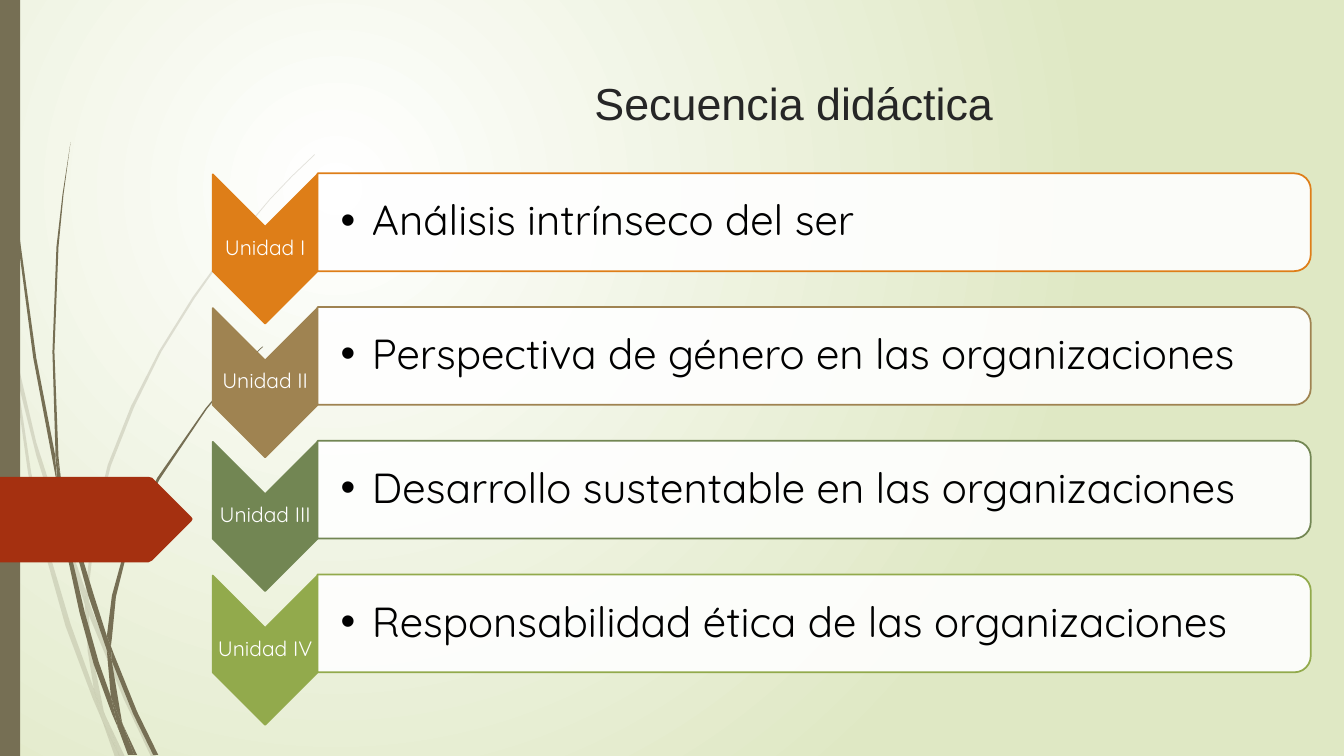
from lxml import etree
from pptx import Presentation
from pptx.dml.color import RGBColor
from pptx.enum.shapes import MSO_SHAPE
from pptx.enum.text import MSO_ANCHOR, PP_ALIGN
from pptx.oxml.ns import qn
from pptx.util import Inches, Pt

CHEVRON = MSO_SHAPE.CHEVRON
ROUND_BAR = MSO_SHAPE.ROUND_2_SAME_RECTANGLE
RECTANGLE = MSO_SHAPE.RECTANGLE
MIDDLE, BOTTOM = MSO_ANCHOR.MIDDLE, MSO_ANCHOR.BOTTOM
CENTER, LEFT = PP_ALIGN.CENTER, PP_ALIGN.LEFT

WHITE = RGBColor(0xFF, 0xFF, 0xFF)
BLACK = RGBColor(0, 0, 0)
PALE_GREEN = RGBColor(0xDF, 0xE8, 0xC4)
OLIVE = RGBColor(0x76, 0x6F, 0x54)
RED = RGBColor(0xA5, 0x30, 0x10)
DARK = RGBColor(0x26, 0x26, 0x26)

UNITS = [
    ("Unidad I", "Análisis intrínseco del ser", RGBColor(0xDE, 0x7E, 0x18)),
    ("Unidad II", "Perspectiva de género en las organizaciones", RGBColor(0x9F, 0x83, 0x51)),
    ("Unidad III", "Desarrollo sustentable en las organizaciones", RGBColor(0x72, 0x86, 0x53)),
    ("Unidad IV", "Responsabilidad ética de las organizaciones", RGBColor(0x92, 0xAA, 0x4C)),
]

# Outlines of the grass blades, piece by piece
FAINT_GRASS = [
    [(0.11, 3.5), (0.09, 3.22), (0, 2.82), (0, 2.99), (0.1, 3.44)],
    [(0.58, 5.22), (0.84, 5.99), (0.85, 5.86), (0.62, 5.2), (0.36, 4.39), (0.14, 3.45),
     (0.17, 3.76), (0.36, 4.52)],
    [(0.92, 6.07), (0.88, 5.96), (0.88, 6.1), (1.23, 6.94), (1.5, 7.51), (1.55, 7.51), (1.27, 6.92)],
    [(1.19, 7.51), (1.24, 7.51), (1.05, 7.11)],
    [(0.93, 6.83), (0.7, 6.19), (0.48, 5.45), (0.31, 4.69), (0.17, 3.76), (0.11, 3.5),
     (0.28, 4.7), (0.44, 5.46), (0.65, 6.21), (0.92, 6.93), (1.01, 7.14), (0.99, 7.07)],
    [(0.84, 5.99), (0.87, 6.46), (0.93, 6.83), (0.96, 6.92), (1.05, 7.11), (1.03, 7.06),
     (0.91, 6.46), (0.88, 6.1), (0.88, 6.08)],
    [(0.88, 5.84), (0.95, 5.22), (1.1, 4.62), (1.33, 4.04), (1.6, 3.49), (1.93, 2.96), (2.29, 2.45),
     (2.68, 1.98), (2.9, 1.75), (3.12, 1.54), (3.12, 1.53), (2.89, 1.75), (2.68, 1.97),
     (2.28, 2.44), (1.91, 2.95), (1.58, 3.48), (1.3, 4.03), (1.07, 4.61), (0.92, 5.22),
     (0.85, 5.84), (0.85, 5.86), (0.88, 5.96)],
    [(1.01, 7.14), (1.14, 7.51), (1.19, 7.51)],
    [(0.88, 6.08), (0.88, 6.1), (0.88, 5.96), (0.85, 5.86), (0.84, 5.99)],
    [(0.96, 6.92), (0.93, 6.83), (0.99, 7.07), (1.01, 7.14), (1.19, 7.51), (1.05, 7.11)],
]
DARK_GRASS = [
    [(0.07, 1.1), (0.17, 2.33), (0.33, 3.55), (0.56, 4.77), (0.57, 4.81), (0.55, 4.57),
     (0.55, 4.53), (0.36, 3.55), (0.19, 2.32), (0.08, 1.09), (0.05, 0.48), (0.04, 0),
     (0.03, 0), (0.04, 0.48)],
    [(0.88, 5.92), (1.06, 6.45), (1.06, 6.33), (1.06, 6.31), (0.93, 5.9), (0.75, 5.31),
     (0.6, 4.72), (0.64, 5.05)],
    [(1.13, 6.49), (1.1, 6.41), (1.11, 6.56), (1.32, 7.08), (1.52, 7.49), (1.57, 7.49), (1.36, 7.06)],
    [(1.1, 6.91), (0.98, 6.57), (0.84, 6.07), (0.72, 5.56), (0.64, 5.05), (0.57, 4.77), (0.68, 5.57),
     (0.79, 6.08), (0.93, 6.59), (1.11, 7.08), (1.17, 7.22), (1.16, 7.17)],
    [(0.6, 4.72), (0.58, 4.53), (0.54, 3.49), (0.58, 2.45), (0.63, 1.93), (0.7, 1.41),
     (0.62, 1.93), (0.56, 2.45), (0.52, 3.49), (0.55, 4.49)],
    [(1.33, 7.49), (1.36, 7.49), (1.22, 7.19)],
    [(0.57, 4.77), (0.64, 5.05), (0.6, 4.72), (0.55, 4.49), (0.55, 4.53)],
    [(1.11, 6.33), (1.15, 5.92), (1.25, 5.52), (1.4, 5.13), (1.58, 4.76), (2.05, 4.06), (2.31, 3.74),
     (2.45, 3.59), (2.61, 3.44), (2.6, 3.44), (2.45, 3.58), (2.31, 3.73), (2.04, 4.05),
     (1.56, 4.74), (1.37, 5.12), (1.22, 5.51), (1.11, 5.91), (1.06, 6.31), (1.1, 6.41)],
    [(1.17, 7.22), (1.27, 7.49), (1.31, 7.49)],
    [(1.06, 6.45), (1.1, 6.91), (1.16, 7.06), (1.22, 7.19), (1.21, 7.16), (1.11, 6.56), (1.09, 6.51)],
    [(1.06, 6.45), (1.09, 6.51), (1.11, 6.56), (1.1, 6.41), (1.06, 6.31), (1.06, 6.33)],
    [(1.16, 7.06), (1.1, 6.91), (1.16, 7.17), (1.17, 7.22), (1.3, 7.49), (1.33, 7.49), (1.22, 7.19)],
]


def paint(shape, fill, line=None, alpha=100):
    shape.shadow.inherit = False
    shape.fill.solid()
    shape.fill.fore_color.rgb = fill
    if alpha < 100:
        color = shape.element.spPr.xpath("./a:solidFill/a:srgbClr")[0]
        etree.SubElement(color, qn("a:alpha"), val=str(alpha * 1000))
    if line is None:
        shape.line.fill.background()
    else:
        shape.line.color.rgb = line
        shape.line.width = Pt(1.25)


def add_outline(page, points, fill, alpha=100):
    corners = [(Inches(x), Inches(y)) for x, y in points]
    builder = page.shapes.build_freeform(*corners[0])
    builder.add_line_segments(corners[1:], close=True)
    paint(builder.convert_to_shape(), fill, alpha=alpha)


def add_turned_shape(page, kind, left, top, width, height):
    """Place a shape turned a quarter so that it covers the given box."""
    shift = (width - height) / 2
    shape = page.shapes.add_shape(kind, Inches(left + shift), Inches(top - shift),
                                  Inches(height), Inches(width))
    shape.rotation = 90
    return shape


def add_text(page, box, words, size, color, align, insets, after):
    frame = page.shapes.add_textbox(*map(Inches, box)).text_frame
    frame.word_wrap = True
    frame.vertical_anchor = MIDDLE
    frame.margin_left, frame.margin_top, frame.margin_right, frame.margin_bottom = map(Inches, insets)
    para = frame.paragraphs[0]
    para.alignment = align
    para.line_spacing = 0.9
    para.space_after = Pt(after)
    span = para.add_run()
    span.text = words
    span.font.name, span.font.size = "Quicksand", Pt(size)
    span.font.color.rgb = color
    return para


def add_bullet(para, indent):
    para.level = 1
    props = para._p.get_or_add_pPr()
    props.set("marL", str(Inches(indent)))
    props.set("indent", str(-Inches(indent)))
    etree.SubElement(props, qn("a:buFont"), typeface="Arial")
    etree.SubElement(props, qn("a:buChar"), char="•")


def add_background(page):
    fill = page.background.fill
    fill.gradient()
    for stop, color in zip(fill.gradient_stops, (WHITE, PALE_GREEN)):
        stop.color.rgb = color
    gradient = page.element.xpath(".//p:bgPr/a:gradFill")[0]
    gradient.remove(gradient.find(qn("a:lin")))
    circle = etree.SubElement(gradient, qn("a:path"), path="circle")
    etree.SubElement(circle, qn("a:fillToRect"), l="50000", t="50000", r="100000", b="100000")


def add_side_decoration(page, height):
    for pieces, alpha in ((FAINT_GRASS, 20), (DARK_GRASS, 100)):
        for points in pieces:
            add_outline(page, points, OLIVE, alpha)
    paint(page.shapes.add_shape(RECTANGLE, 0, 0, Inches(0.2), Inches(height)), OLIVE)
    # Red tag with softened corners
    top, middle, bottom = 4.73, 5.15, 5.58
    add_outline(page, [(0, top), (1.47, top), (1.51, top + 0.01), (1.9, middle - 0.02),
                       (1.91, middle), (1.9, middle + 0.02), (1.51, bottom - 0.02),
                       (1.47, bottom), (0, bottom)], RED)


def add_title(page, left, top, width, height, words):
    title = page.shapes.title
    title.left, title.top, title.width, title.height = map(Inches, (left, top, width, height))
    title.text_frame.vertical_anchor = BOTTOM
    para = title.text_frame.paragraphs[0]
    para.alignment = CENTER
    span = para.add_run()
    span.text = words
    span.font.name, span.font.size = "Arial", Pt(32)
    span.font.color.rgb = DARK


def add_unit_list(page, left, top, width, height):
    arrow_width, arrow_height, bar_height = 1.04, 1.48, 0.97
    pitch = (height - arrow_height) / (len(UNITS) - 1)
    bar_left, bar_width = left + arrow_width, width - arrow_width
    for row, (unit, topic, color) in enumerate(UNITS):
        y = top + row * pitch
        # Chevron and its label
        arrow = add_turned_shape(page, CHEVRON, left, y, arrow_width, arrow_height)
        paint(arrow, color, color)
        add_text(page, (left, y + 0.51, arrow_width, 0.45), unit, 15, WHITE,
                 CENTER, [0.01] * 4, 5.25)
        # Bar and its topic
        bar = add_turned_shape(page, ROUND_BAR, bar_left, y - 0.01, bar_width, bar_height)
        paint(bar, WHITE, color, alpha=90)
        para = add_text(page, (bar_left, y + 0.04, bar_width - 0.05, bar_height - 0.1), topic, 30,
                        BLACK, LEFT, (0.23, 0.02, 0.02, 0.02), 4.5)
        add_bullet(para, 0.31)


def main():
    deck = Presentation()
    deck.slide_width, deck.slide_height = Inches(13.33), Inches(7.5)
    page = deck.slides.add_slide(deck.slide_layouts[5])
    add_background(page)
    add_side_decoration(page, 7.5)
    add_title(page, 3, 0.31, 9.75, 1.02, "Secuencia didáctica")
    add_unit_list(page, 2.11, 1.73, 10.89, 5.46)
    deck.save("out.pptx")


if __name__ == "__main__":
    main()
